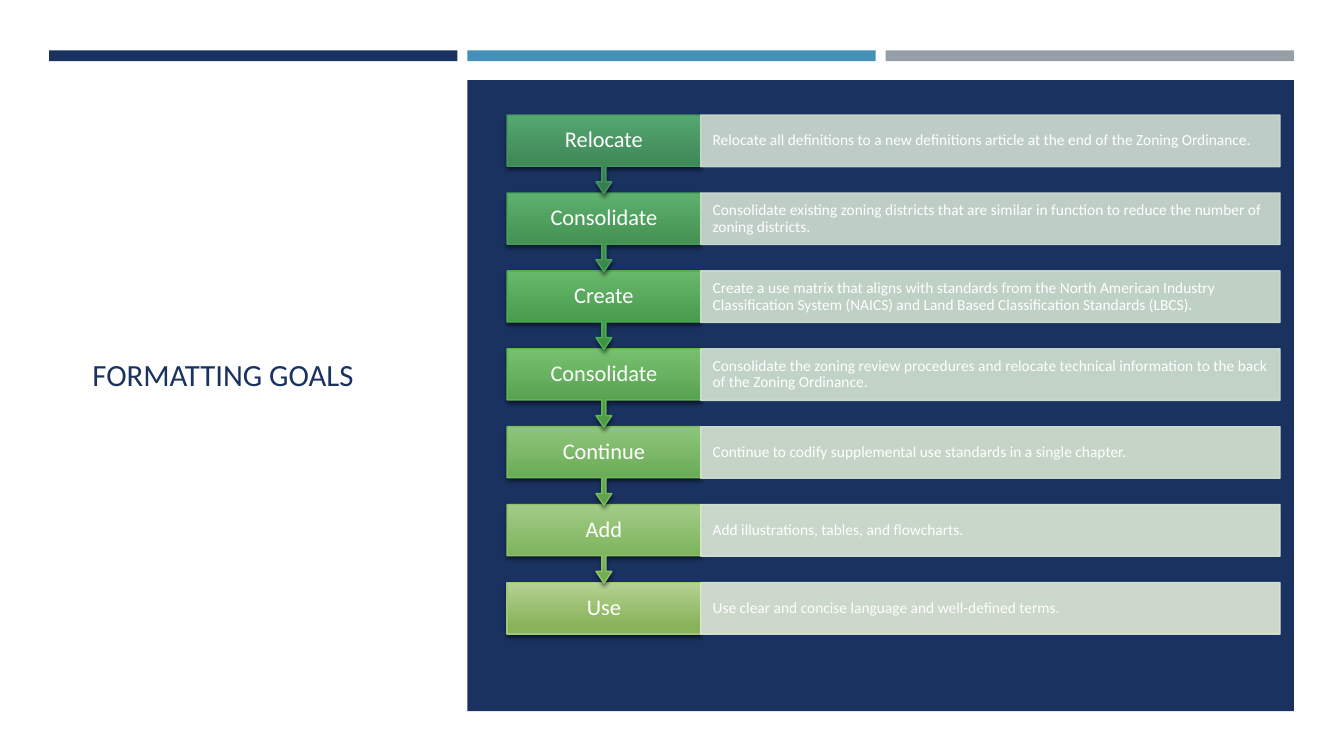
"""Build the formatting goals slide with its chain of seven steps."""
from dataclasses import dataclass

from lxml import etree
from pptx import Presentation
from pptx.dml.color import RGBColor
from pptx.enum import shapes, text
from pptx.oxml import ns
from pptx.util import Cm, Pt

FONT = "Calibri"
WHITE = RGBColor(0xFF, 0xFF, 0xFF)
NAVY = RGBColor(0x1A, 0x32, 0x60)
BLUE = RGBColor(0x45, 0x90, 0xB8)
GREY = RGBColor(0x96, 0x9F, 0xA7)

RECT = shapes.MSO_SHAPE.RECTANGLE
CALLOUT = shapes.MSO_SHAPE.DOWN_ARROW_CALLOUT
BAR_LEFT, BAR_TOP, BAR_WIDTH, BAR_STEP = 1.24, 1.27, 10.29, 10.54
STEP_LEFT, STEP_TOP, STEP_WIDTH, STEP_HEIGHT = 12.78, 2.9, 4.88, 1.3
DETAIL_WIDTH, CALLOUT_HEIGHT = 14.6, 1.98
LAST_TOP = 14.68


@dataclass(frozen=True)
class Box:
    left: float
    top: float
    width: float
    height: float

    def lengths(self) -> tuple:
        return Cm(self.left), Cm(self.top), Cm(self.width), Cm(self.height)


@dataclass(frozen=True)
class Goal:
    verb: str
    detail: str
    light: RGBColor
    dark: RGBColor
    edge: RGBColor
    tint: RGBColor


def goal(verb: str, detail: str, *colours: str) -> Goal:
    return Goal(verb, detail, *map(RGBColor.from_string, colours))


GOALS = [
    goal("Relocate", "Relocate all definitions to a new definitions article at the end "
         "of the Zoning Ordinance.", "55A770", "377D50", "42955F", "CFDDD2"),
    goal("Consolidate", "Consolidate existing zoning districts that are similar in function "
         "to reduce the number of zoning districts.", "5EB06D", "3B884B", "47A159", "D0DFD2"),
    goal("Create", "Create a use matrix that aligns with standards from the North American "
         "Industry Classification System (NAICS) and Land Based Classification Standards "
         "(LBCS).", "67B86B", "3F9244", "4BAE51", "D1E2D1"),
    goal("Consolidate", "Consolidate the zoning review procedures and relocate technical "
         "information to the back of the Zoning Ordinance.",
         "77C070", "4F9947", "5EB654", "D4E4D2"),
    goal("Continue", "Continue to codify supplemental use standards in a single chapter.",
         "8DC67B", "61A34B", "76BC60", "D8E6D3"),
    goal("Add", "Add illustrations, tables, and flowcharts.",
         "A1CC87", "74AD50", "8DC16B", "DCE9D5"),
    goal("Use", "Use clear and concise language and well-defined terms.",
         "B4D293", "89B359", "A2C777", "E0EBD6"),
]


def add_block(s, kind, box: Box, colour: RGBColor):
    sp = s.shapes.add_shape(kind, *box.lengths())
    sp.shadow.inherit = False
    sp.fill.solid()
    sp.fill.fore_color.rgb = colour
    sp.line.fill.background()
    return sp


def write(sp, words: str, size: float, colour: RGBColor, align,
          inset_x: float, inset_y: float, spacing: float = 0.9) -> None:
    tf = sp.text_frame
    tf.word_wrap = True
    tf.vertical_anchor = text.MSO_ANCHOR.MIDDLE
    tf.margin_left = tf.margin_right = Cm(inset_x)
    tf.margin_top = tf.margin_bottom = Cm(inset_y)
    p = tf.paragraphs[0]
    p.alignment = align
    p.line_spacing = spacing
    r = p.add_run()
    r.text = words
    r.font.name = FONT
    r.font.size = Pt(size)
    r.font.color.rgb = colour


def set_alpha(parent, percent: int) -> None:
    for colour in parent.iter(ns.qn("a:srgbClr")):
        etree.SubElement(colour, ns.qn("a:alpha"), val=str(percent * 1000))


def add_shadow(sp) -> None:
    effects = sp._element.spPr.find(ns.qn("a:effectLst"))
    shadow = etree.SubElement(effects, ns.qn("a:outerShdw"), blurRad=str(Pt(3)),
                              dist=str(Pt(2)), dir="5400000", rotWithShape="0")
    etree.SubElement(shadow, ns.qn("a:srgbClr"), val="000000")
    set_alpha(shadow, 55)


def add_verb(s, item: Goal, top: float, last: bool) -> None:
    height = STEP_HEIGHT if last else CALLOUT_HEIGHT
    sp = add_block(s, RECT if last else CALLOUT,
                   Box(STEP_LEFT, top, STEP_WIDTH, height), item.light)
    if not last:
        for i, value in enumerate((0.05, 0.1, 0.15, 0.65)):
            sp.adjustments[i] = value
    sp.fill.gradient()
    sp.fill.gradient_angle = 270
    stops = zip(sp.fill.gradient_stops, (item.light, item.dark), (0, 0.84))
    for stop, colour, position in stops:
        stop.color.rgb = colour
        stop.position = position
    sp.line.color.rgb = item.edge
    sp.line.width = Pt(1)
    add_shadow(sp)
    write(sp, item.verb, 16, WHITE, text.PP_ALIGN.CENTER, 0.36, 0.3)


def add_detail(s, item: Goal, top: float) -> None:
    box = Box(STEP_LEFT + STEP_WIDTH, top, DETAIL_WIDTH, STEP_HEIGHT)
    sp = add_block(s, RECT, box, item.tint)
    sp.line.color.rgb = item.tint
    sp.line.width = Pt(1)
    set_alpha(sp._element.spPr, 90)
    write(sp, item.detail, 11, WHITE, text.PP_ALIGN.LEFT, 0.3, 0.38)


def main() -> None:
    prs = Presentation()
    prs.slide_width, prs.slide_height = Cm(33.87), Cm(19.05)
    s = prs.slides.add_slide(prs.slide_layouts[6])
    s.background.fill.solid()
    s.background.fill.fore_color.rgb = WHITE

    title = s.shapes.add_textbox(*Box(2.08, 2.9, 8.48, 13.08).lengths())
    write(title, "FORMATTING GOALS", 22, NAVY, text.PP_ALIGN.LEFT, 0.25, 0.13, 1)

    for i, colour in enumerate((NAVY, BLUE, GREY)):
        add_block(s, RECT, Box(BAR_LEFT + i * BAR_STEP, BAR_TOP, BAR_WIDTH, 0.27), colour)
    add_block(s, RECT, Box(BAR_LEFT + BAR_STEP, 2.02, BAR_STEP + BAR_WIDTH, 15.9), NAVY)

    final = len(GOALS) - 1
    pitch = (LAST_TOP - STEP_TOP) / final
    for i, item in reversed(list(enumerate(GOALS))):
        top = STEP_TOP + i * pitch
        add_verb(s, item, top, i == final)
        add_detail(s, item, top)

    prs.save("out.pptx")


if __name__ == "__main__":
    main()
